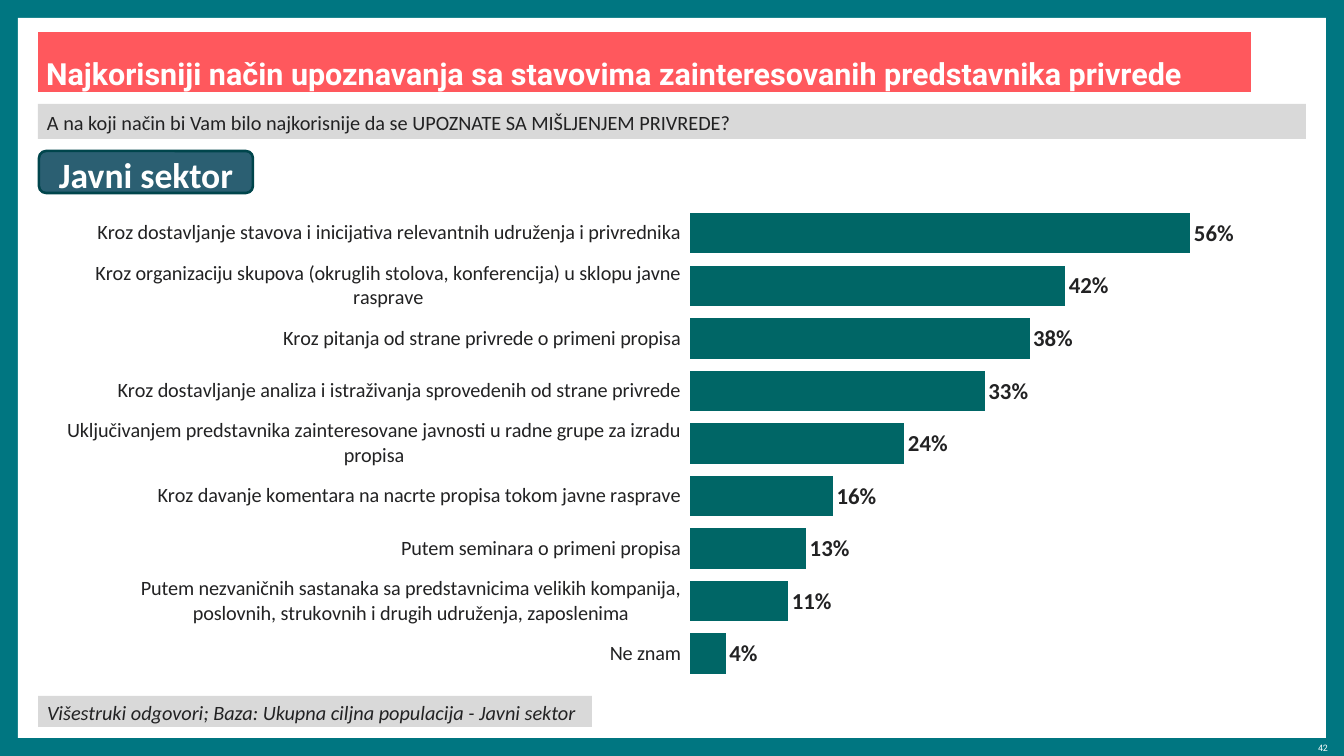
import pptx
import pptx.chart.data
import pptx.dml.color
import pptx.enum.chart
import pptx.enum.shapes
import pptx.enum.text
import pptx.oxml
import pptx.util

EMU_PER_PX = 10000
TEAL, BAR_TEAL, CORAL, GREY = "007681", "006666", "FF585D", "D9D9D9"
BADGE_BLUE, BADGE_EDGE = "2B5F72", "00454C"
INK, WHITE = "222223", "FFFFFF"
SHAPE = pptx.enum.shapes.MSO_SHAPE
ALIGN = pptx.enum.text.PP_ALIGN

ANSWERS = [
    ("Kroz dostavljanje stavova i inicijativa relevantnih udruženja i privrednika", 56),
    ("Kroz organizaciju skupova (okruglih stolova, konferencija) u sklopu javne rasprave", 42),
    ("Kroz pitanja od strane privrede o primeni propisa", 38),
    ("Kroz dostavljanje analiza i istraživanja sprovedenih od strane privrede", 33),
    ("Uključivanjem predstavnika zainteresovane javnosti u radne grupe za izradu propisa", 24),
    ("Kroz davanje komentara na nacrte propisa tokom javne rasprave", 16),
    ("Putem seminara o primeni propisa", 13),
    ("Putem nezvaničnih sastanaka sa predstavnicima velikih kompanija, "
     "poslovnih, strukovnih i drugih udruženja, zaposlenima", 11),
    ("Ne znam", 4),
]


def px(length):
    return pptx.util.Emu(length * EMU_PER_PX)


def color(hex_code):
    return pptx.dml.color.RGBColor.from_string(hex_code)


def paint(fill, hex_code):
    fill.solid()
    fill.fore_color.rgb = color(hex_code)


def set_font(font, size, hex_code, name="Calibri", bold=False, italic=False):
    font.name, font.size = name, pptx.util.Pt(size)
    font.bold, font.italic = bold, italic
    font.color.rgb = color(hex_code)


def write(shape, text, insets, align=ALIGN.LEFT, spacing=1.1, before=0, after=0, **font):
    """Fill a shape with one paragraph; insets are left, top, right, bottom in px."""
    frame = shape.text_frame
    frame.text = text
    frame.word_wrap = True
    frame.auto_size = pptx.enum.text.MSO_AUTO_SIZE.NONE
    frame.vertical_anchor = pptx.enum.text.MSO_ANCHOR.MIDDLE
    (frame.margin_left, frame.margin_top,
     frame.margin_right, frame.margin_bottom) = map(px, insets)
    paragraph = frame.paragraphs[0]
    paragraph.alignment = align
    paragraph.line_spacing = spacing
    paragraph.space_before = pptx.util.Pt(before)
    paragraph.space_after = pptx.util.Pt(after)
    set_font(paragraph.font, **font)


def add_block(slide, box, hex_code, kind=SHAPE.RECTANGLE):
    block = slide.shapes.add_shape(kind, *map(px, box))
    block.shadow.inherit = False
    paint(block.fill, hex_code)
    block.line.fill.background()
    return block


def add_frame(slide, box):
    """White page on the teal background, placed behind everything."""
    paint(slide.background.fill, TEAL)
    page = add_block(slide, box, WHITE)
    slide.shapes.element.insert(2, page.element)


def add_title(slide, box):
    title = slide.shapes.title
    title.left, title.top, title.width, title.height = map(px, box)
    paint(title.fill, CORAL)
    write(title, "Najkorisniji način upoznavanja sa stavovima zainteresovanih predstavnika privrede",
          (8, 7, 8, 0), spacing=pptx.util.Pt(41),
          size=24, hex_code=WHITE, name="Roboto", bold=True)


def add_strip(slide, box, text, italic=False):
    write(add_block(slide, box, GREY), text, (9, 0, 9, 0), before=6, after=6,
          size=16, hex_code=INK, italic=italic)


def add_sector_badge(slide, box):
    badge = add_block(slide, box, BADGE_BLUE, SHAPE.ROUNDED_RECTANGLE)
    paint(badge.line.fill, BADGE_EDGE)
    badge.line.width = pptx.util.Pt(2)
    write(badge, "Javni sektor", (4, 4, 4, 4), align=ALIGN.CENTER, before=24,
          size=28, hex_code=WHITE, bold=True)


def add_page_number(slide, box):
    number = slide.shapes.add_textbox(*map(px, box))
    write(number, "42", (0, 0, 0, 0), align=ALIGN.RIGHT,
          size=7, hex_code=WHITE, name="Roboto")


def place_plot(chart, x, y, w, h):
    """Fix the inner plot area, in fractions of the chart."""
    plot_area = chart.element.chart.plotArea
    for old in plot_area.xpath("c:layout"):
        plot_area.remove(old)
    edges = "".join(f'<c:{tag} val="{value}"/>' for tag, value in
                    [("layoutTarget", "inner"), ("xMode", "edge"), ("yMode", "edge"),
                     ("x", x), ("y", y), ("w", w), ("h", h)])
    plot_area.insert(0, pptx.oxml.parse_xml(
        '<c:layout xmlns:c="http://schemas.openxmlformats.org/drawingml/2006/chart">'
        f"<c:manualLayout>{edges}</c:manualLayout></c:layout>"))


def add_answers_chart(slide, box):
    answers = pptx.chart.data.CategoryChartData(number_format="General")
    answers.categories = [answer for answer, _ in ANSWERS]
    answers.add_series("Series 1", [share for _, share in ANSWERS])
    chart = slide.shapes.add_chart(
        pptx.enum.chart.XL_CHART_TYPE.BAR_CLUSTERED, *map(px, box), answers).chart
    chart.has_legend = chart.has_title = False
    set_font(chart.font, 16, INK)

    answer_axis, share_axis = chart.category_axis, chart.value_axis
    answer_axis.reverse_order = True
    answer_axis.has_major_gridlines = False
    answer_axis.format.line.fill.background()
    set_font(answer_axis.tick_labels.font, 16, INK)
    share_axis.minimum_scale, share_axis.maximum_scale = 0, 60
    share_axis.has_major_gridlines = False
    share_axis.visible = False

    plot = chart.plots[0]
    plot.vary_by_categories = False
    plot.gap_width, plot.overlap = 30, 100
    paint(plot.series[0].format.fill, BAR_TEAL)
    labels = plot.series[0].data_labels
    labels.show_value = True
    labels.number_format, labels.number_format_is_linked = '#"%"', False
    labels.position = pptx.enum.chart.XL_LABEL_POSITION.OUTSIDE_END
    set_font(labels.font, 18, INK, bold=True)
    place_plot(chart, 0.52, 0, 0.45, 1)


def main():
    deck = pptx.Presentation()
    deck.slide_width, deck.slide_height = px(1344), px(756)
    slide = deck.slides.add_slide(deck.slide_layouts.get_by_name("Title Only"))
    add_frame(slide, (18, 18, 1308, 720))
    add_page_number(slide, (1255, 741, 73, 12))
    add_answers_chart(slide, (67, 207, 1195, 473))
    add_title(slide, (38, 32, 1213, 60))
    add_strip(slide, (38, 104, 1268, 35),
              "A na koji način bi Vam bilo najkorisnije da se UPOZNATE SA MIŠLJENJEM PRIVREDE?")
    add_sector_badge(slide, (39, 151, 214, 42))
    add_strip(slide, (38, 696, 554, 31),
              "Višestruki odgovori; Baza: Ukupna ciljna populacija - Javni sektor", italic=True)
    deck.save("out.pptx")


if __name__ == "__main__":
    main()
